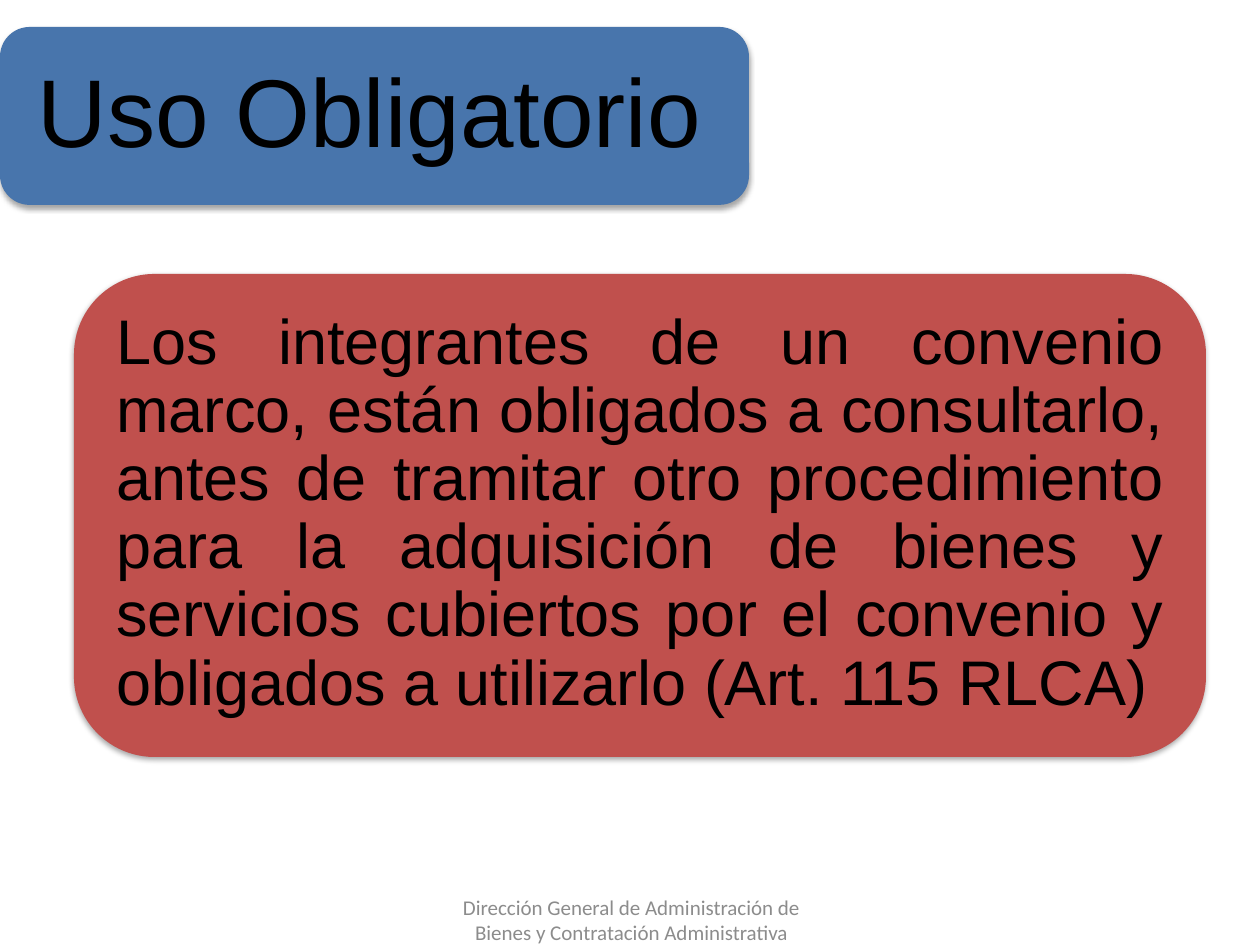
from lxml import etree
from pptx import Presentation
from pptx.dml.color import RGBColor
from pptx.enum import shapes, text
from pptx.oxml.ns import qn
from pptx.util import Emu, Pt

# Content: lengths in px, boxes as left, top, width, height
TITLE = dict(text="Uso Obligatorio", card=(0, 27, 749, 178), fill="4875AC",
             box=(9, 36, 732, 160), inset=29, size=55, align=text.PP_ALIGN.LEFT)
BODY = dict(text="Los integrantes de un convenio marco, están obligados a "
                 "consultarlo, antes de tramitar otro procedimiento para la "
                 "adquisición de bienes y servicios cubiertos por el convenio y "
                 "obligados a utilizarlo (Art. 115 RLCA)",
            card=(74, 274, 1132, 483), fill="C0504D",
            box=(98, 297, 1084, 435), inset=18, size=36, align=text.PP_ALIGN.JUSTIFY)
FOOTER = ("Dirección General de Administración de Bienes y Contratación "
          "Administrativa")
FOOTER_BOX = (432, 895, 399, 50)


def px(n):
    return Emu(round(n * 914400 / 126))


def rgb(value):
    return RGBColor.from_string(value)


def place(sp, box):
    sp.left, sp.top, sp.width, sp.height = map(px, box)


def add_shadow(sp):
    effects = etree.SubElement(sp._element.spPr, qn("a:effectLst"))
    shadow = etree.SubElement(effects, qn("a:outerShdw"), blurRad=str(Pt(3.1)),
                              dist=str(Pt(1.8)), dir="5400000", rotWithShape="0")
    color = etree.SubElement(shadow, qn("a:srgbClr"), val="000000")
    etree.SubElement(color, qn("a:alpha"), val="35000")


def add_card(slide, box, fill):
    sp = slide.shapes.add_shape(shapes.MSO_SHAPE.ROUNDED_RECTANGLE, *map(px, box))
    sp.fill.solid()
    sp.fill.fore_color.rgb = rgb(fill)
    sp.line.fill.background()
    add_shadow(sp)


def write(sp, words, size, font, color, align):
    tf = sp.text_frame
    tf.text = words
    tf.word_wrap = True
    tf.auto_size = text.MSO_AUTO_SIZE.NONE
    tf.vertical_anchor = text.MSO_ANCHOR.MIDDLE
    p = tf.paragraphs[0]
    p.alignment = align
    r = p.runs[0]
    r.font.size, r.font.name = Pt(size), font
    r.font.color.rgb = rgb(color)
    return tf


def fill_placeholder(slide, sp, part):
    add_card(slide, part["card"], part["fill"])
    slide.shapes._spTree.append(sp._element)  # bring the text in front of its card
    place(sp, part["box"])
    tf = write(sp, part["text"], part["size"], "Arial", "000000", part["align"])
    tf.margin_left = tf.margin_right = px(part["inset"])
    tf.margin_top = tf.margin_bottom = px(part["inset"])
    p = tf.paragraphs[0]
    p.line_spacing, p.space_before = 0.9, Pt(0)
    pPr = p._p.get_or_add_pPr()
    pPr.set("marL", "0")
    pPr.set("indent", "0")
    etree.SubElement(pPr, qn("a:buNone"))


prs = Presentation()
prs.slide_width, prs.slide_height = px(1260), px(945)
slide = prs.slides.add_slide(prs.slide_layouts[1])

# Title and body on their cards
title, body = slide.placeholders
fill_placeholder(slide, title, TITLE)
fill_placeholder(slide, body, BODY)

# Footer
footer = slide.shapes.add_textbox(*map(px, FOOTER_BOX))
write(footer, FOOTER, 12, "Calibri", "8C8C8C", text.PP_ALIGN.CENTER)

prs.save("out.pptx")
